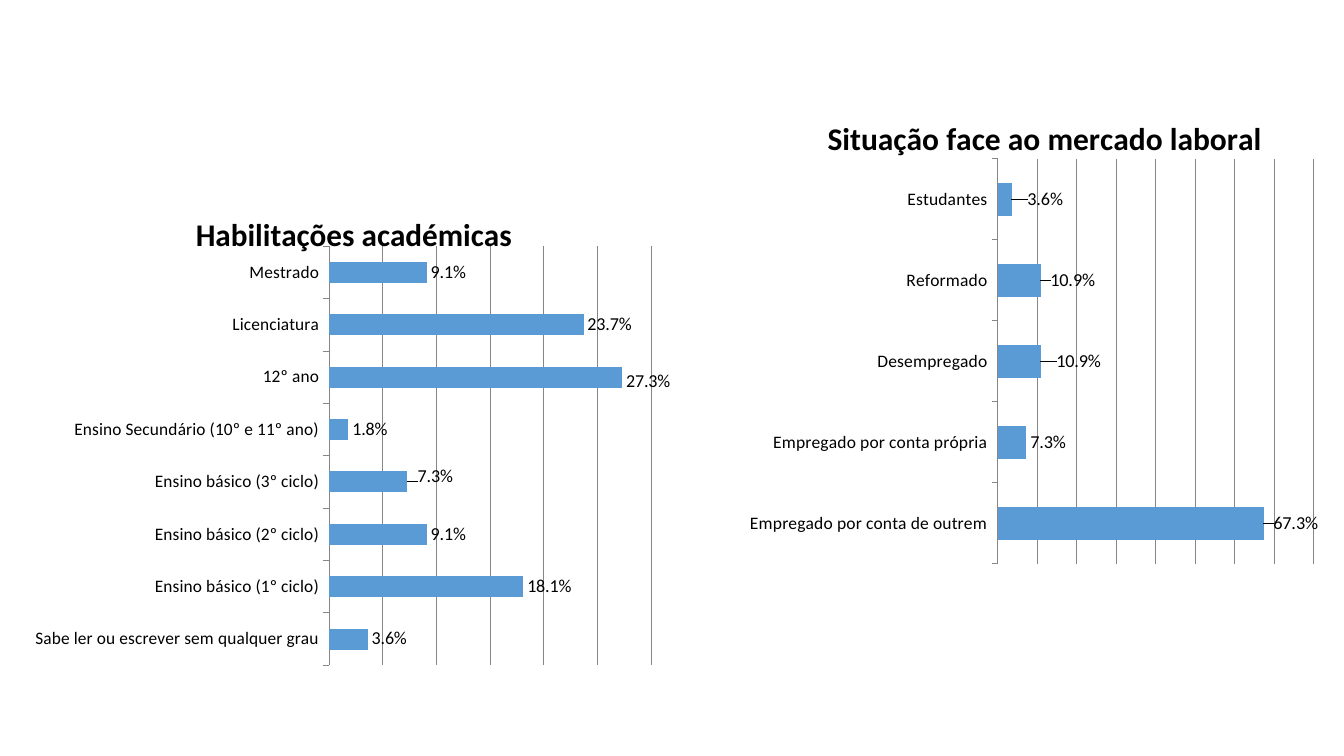
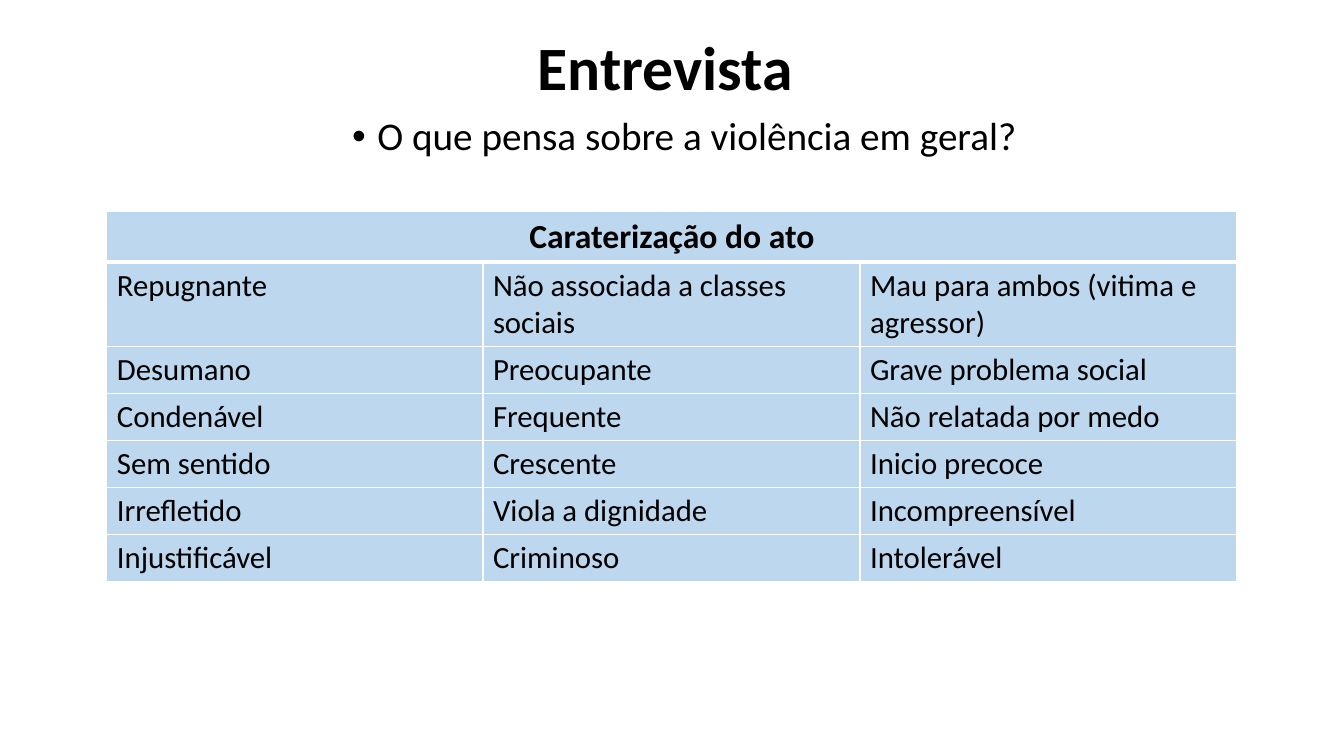
from lxml import etree
from pptx import Presentation
from pptx.chart.data import CategoryChartData
from pptx.dml.color import RGBColor
from pptx.enum.chart import XL_CHART_TYPE as CHART
from pptx.enum.chart import XL_LABEL_POSITION as LABEL
from pptx.enum.chart import XL_TICK_MARK as TICK
from pptx.enum.text import MSO_ANCHOR as ANCHOR
from pptx.enum.text import PP_ALIGN as ALIGN
from pptx.oxml.ns import qn
from pptx.util import Emu, Pt

# Shared style
PX = 9144  # 100 px to the inch
FONT = "Calibri"
BLACK, WHITE, BLUE, PALE, GRAY = "000000", "FFFFFF", "5B9BD5", "BDD7EE", "868686"
PERCENT = "0.0%"


def px(n):
    return Emu(n * PX)


def rgb(color):
    return RGBColor.from_string(color)


def set_layout(parent, index, inner=False, **fractions):
    """Give a chart part a manual layout, in fractions of the chart."""
    for old in parent.findall(qn("c:layout")):
        parent.remove(old)
    layout = etree.Element(qn("c:layout"))
    manual = etree.SubElement(layout, qn("c:manualLayout"))
    if inner:
        etree.SubElement(manual, qn("c:layoutTarget"), val="inner")
    if "edge" in fractions:
        fractions.pop("edge")
        for mode in ("xMode", "yMode"):
            etree.SubElement(manual, qn(f"c:{mode}"), val="edge")
    for key, value in fractions.items():
        etree.SubElement(manual, qn(f"c:{key}"), val=str(value))
    parent.insert(index, layout)


class Deck:
    def __init__(self):
        self.prs = Presentation()
        self.prs.slide_width, self.prs.slide_height = px(1333), px(750)
        self.s = None

    def slide(self):
        self.s = self.prs.slides.add_slide(self.prs.slide_layouts[6])

    def style(self, font, size, color=BLACK, bold=False):
        font.name, font.size, font.bold = FONT, Pt(size), bold
        font.color.rgb = rgb(color)

    def run(self, p, text, size, bold=False):
        r = p.add_run()
        r.text = text
        self.style(r.font, size, bold=bold)

    def text(self, box, text, size, bold=False, bullet=False, anchor=ANCHOR.TOP):
        tf = self.s.shapes.add_textbox(*map(px, box)).text_frame
        tf.word_wrap, tf.vertical_anchor = True, anchor
        p = tf.paragraphs[0]
        p.alignment, p.line_spacing = ALIGN.CENTER, 0.9
        if bullet:
            pPr = p._p.get_or_add_pPr()
            pPr.set("marL", str(px(25)))
            pPr.set("indent", str(px(-25)))
            etree.SubElement(pPr, qn("a:buFont"), typeface="Arial")
            etree.SubElement(pPr, qn("a:buChar"), char="•")
        self.run(p, text, size, bold)

    def bar_chart(self, box, title, title_at, plot_at, axis, bars, nudges):
        data = CategoryChartData(number_format=PERCENT)
        data.categories = [name for name, _ in bars]
        data.add_series("Series 1", [value for _, value in bars])
        frame = self.s.shapes.add_chart(CHART.BAR_CLUSTERED, *map(px, box), data)
        chart = frame.chart
        chart.has_legend = False
        self.style(chart.font, 10)

        # Title and plot area
        chart.has_title = True
        head = chart.chart_title
        self.run(head.text_frame.paragraphs[0], title, 22.5, bold=True)
        head.include_in_layout = False
        x, y = title_at
        set_layout(head._element, 1, edge=True, x=x, y=y)
        x, y, w, h = plot_at
        area = chart._chartSpace.chart.plotArea
        set_layout(area, 0, inner=True, edge=True, x=x, y=y, w=w, h=h)

        # Axes
        cat, val = chart.category_axis, chart.value_axis
        cat.major_tick_mark = TICK.OUTSIDE
        cat.has_major_gridlines = False
        self.style(cat.tick_labels.font, 12.5)
        val.visible, val.has_major_gridlines = False, True
        val.minimum_scale, (val.maximum_scale, val.major_unit) = 0, axis
        for line in (cat.format.line, val.major_gridlines.format.line):
            line.color.rgb, line.width = rgb(GRAY), Pt(0.75)

        # Bars and their labels
        plot = chart.plots[0]
        plot.gap_width, plot.vary_by_categories = 150, False
        series = plot.series[0]
        series.format.fill.solid()
        series.format.fill.fore_color.rgb = rgb(BLUE)
        labels = series.data_labels
        labels.show_value, labels.position = True, LABEL.OUTSIDE_END
        labels.number_format, labels.number_format_is_linked = PERCENT, False
        self.style(labels.font, 13)
        for i, (dx, dy) in nudges.items():
            label = series.points[i].data_label
            self.style(label.font, 13)
            label.position = LABEL.OUTSIDE_END
            dLbl = labels._element.find(f"{qn('c:dLbl')}[{qn('c:idx')}][@val]")
            for dLbl in labels._element.findall(qn("c:dLbl")):
                if dLbl.find(qn("c:idx")).get("val") == str(i):
                    set_layout(dLbl, 1, x=dx, y=dy)

    def borders(self, cell, **widths):
        tcPr = cell._tc.get_or_add_tcPr()
        for side in "LRTB":
            width = str(Pt(widths.get(side, 1)))
            ln = etree.SubElement(tcPr, qn(f"a:ln{side}"), w=width)
            fill = etree.SubElement(ln, qn("a:solidFill"))
            etree.SubElement(fill, qn("a:srgbClr"), val=WHITE)

    def table(self, box, widths, heights, header, rows):
        shape = self.s.shapes.add_table(len(heights), len(widths), *map(px, box))
        table = shape.table
        table.first_row = table.horz_banding = False
        for col, width in zip(table.columns, widths):
            col.width = px(width)
        for row, height in zip(table.rows, heights):
            row.height = px(height)
        table.cell(0, 0).merge(table.cell(0, len(widths) - 1))
        for i, texts in enumerate([[header]] + rows):
            for j in range(len(widths)):
                cell = table.cell(i, j)
                self.borders(cell, T=3 if i == 1 else 1, B=3 if i == 0 else 1)
                cell.fill.solid()
                cell.fill.fore_color.rgb = rgb(PALE)
                if j < len(texts):
                    p = cell.text_frame.paragraphs[0]
                    p.alignment = ALIGN.LEFT if i else ALIGN.CENTER
                    self.run(p, texts[j], 22 if i else 24, bold=i == 0)


def charts_slide(deck):
    deck.slide()
    deck.bar_chart(
        (32, 180, 633, 495), "Habilitações académicas",
        (0.25, 0.05), (0.47, 0.13, 0.51, 0.84), (0.3, 0.05),
        [("Sabe ler ou escrever sem qualquer grau", 0.036),
         ("Ensino básico (1º ciclo)", 0.181),
         ("Ensino básico (2º ciclo)", 0.091),
         ("Ensino básico (3º ciclo)", 0.073),
         ("Ensino Secundário (10º e 11º ano)", 0.018),
         ("12º ano", 0.273),
         ("Licenciatura", 0.237),
         ("Mestrado", 0.091)],
        {0: (0, 0), 3: (0.01, -0.01), 5: (0, 0.01)})
    deck.bar_chart(
        (728, 90, 581, 484), "Situação face ao mercado laboral",
        (0.15, 0.04), (0.45, 0.14, 0.54, 0.83), (0.8, 0.1),
        [("Empregado por conta de outrem", 0.673),
         ("Empregado por conta própria", 0.073),
         ("Desempregado", 0.109),
         ("Reformado", 0.109),
         ("Estudantes", 0.036)],
        {0: (0.01, 0), 2: (0.02, 0), 3: (0.01, 0), 4: (0.02, 0)})


def interview_slide(deck):
    deck.slide()
    deck.text((92, 40, 1150, 60), "Entrevista ", 44, bold=True, anchor=ANCHOR.MIDDLE)
    deck.text((62, 111, 1233, 60), "O que pensa sobre a violência em geral?", 28,
              bullet=True)
    deck.table(
        (106, 210, 1121, 367), [373, 374, 374], [47] + [41] * 6,
        "Caraterização do ato",
        [["Repugnante", "Não associada a classes sociais",
          "Mau para ambos (vitima e agressor)"],
         ["Desumano", "Preocupante", "Grave problema social"],
         ["Condenável", "Frequente", "Não relatada por medo"],
         ["Sem sentido", "Crescente", "Inicio precoce"],
         ["Irrefletido", "Viola a dignidade", "Incompreensível"],
         ["Injustificável", "Criminoso", "Intolerável"]])


def main():
    deck = Deck()
    charts_slide(deck)
    interview_slide(deck)
    deck.prs.save("out.pptx")


if __name__ == "__main__":
    main()
